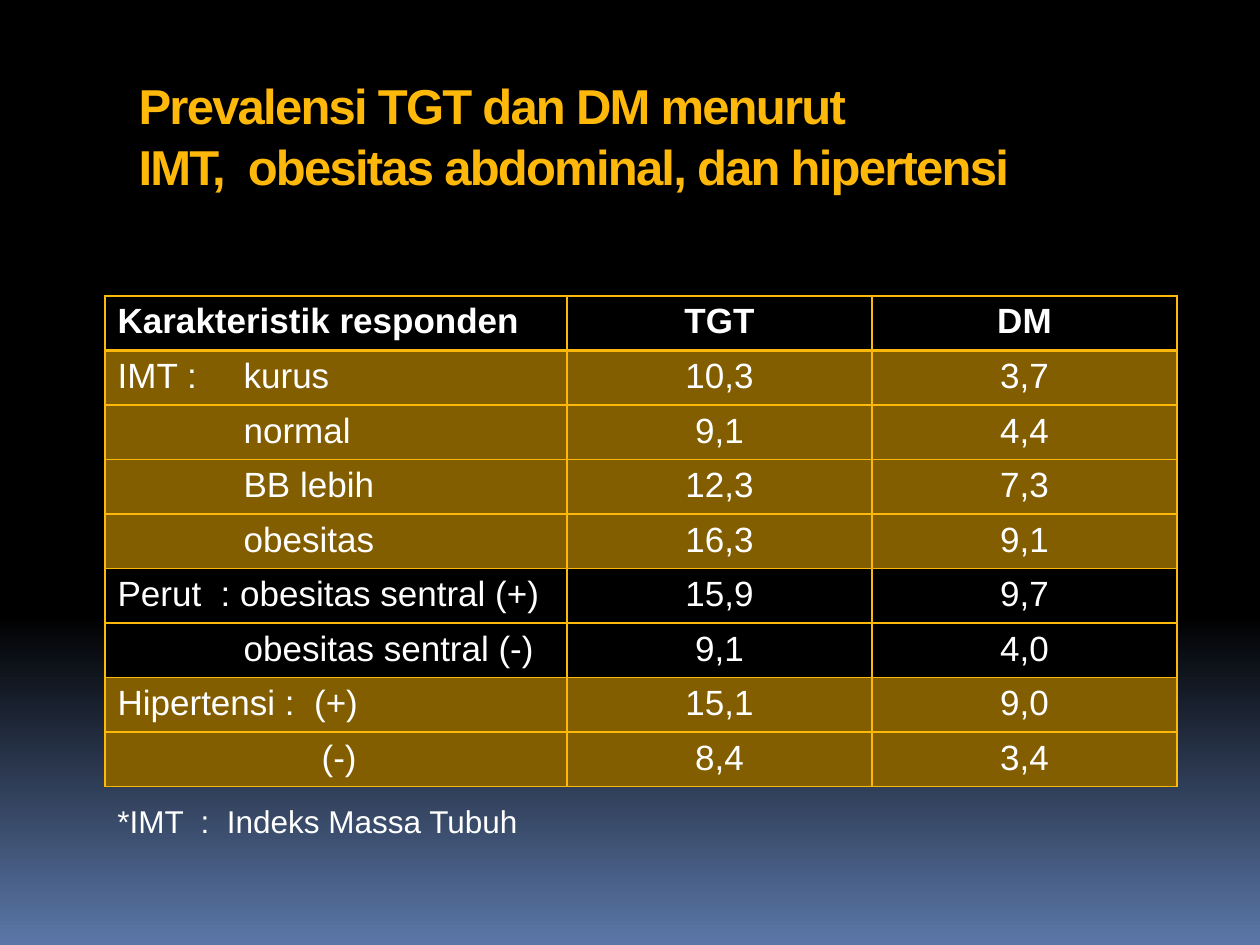
"""Build a slide with a table of TGT and DM prevalence by respondent traits."""
from dataclasses import dataclass

import pptx
import pptx.dml.color
import pptx.enum.text
import pptx.oxml
import pptx.oxml.ns
import pptx.slide
import pptx.util

RGBColor = pptx.dml.color.RGBColor
BLACK = RGBColor(0x00, 0x00, 0x00)
WHITE = RGBColor(0xFF, 0xFF, 0xFF)
AMBER = RGBColor(0xFE, 0xB8, 0x0A)
BROWN = RGBColor(0x83, 0x5E, 0x01)
BLUE = RGBColor(0x5B, 0x77, 0xA8)
ALIGN = pptx.enum.text.PP_ALIGN
ANCHOR = pptx.enum.text.MSO_ANCHOR

PX_PER_INCH = 126
COLUMN_WIDTHS = (462, 305, 305)
CATEGORY_INDENT = 126
SIGN_INDENT = 204
HEADINGS = ("Karakteristik responden", "TGT", "DM")
ROWS = (
    ("IMT :\tkurus", 0, "10,3", "3,7", BROWN),
    ("normal", CATEGORY_INDENT, "9,1", "4,4", BROWN),
    ("BB lebih", CATEGORY_INDENT, "12,3", "7,3", BROWN),
    ("obesitas", CATEGORY_INDENT, "16,3", "9,1", BROWN),
    ("Perut  : obesitas sentral (+)", 0, "15,9", "9,7", BLACK),
    ("obesitas sentral (-)", CATEGORY_INDENT, "9,1", "4,0", BLACK),
    ("Hipertensi :  (+)", 0, "15,1", "9,0", BROWN),
    ("(-)", SIGN_INDENT, "8,4", "3,4", BROWN),
)


def px(length):
    """Turn a length in px into EMU."""
    return pptx.util.Emu(round(length * 914400 / PX_PER_INCH))


@dataclass
class Painter:
    """Hold the style and the current slide."""

    page: pptx.slide.Slide
    font_name: str = "Arial"

    def style(self, para, size, color, bold=False):
        """Set the font of a paragraph."""
        font = para.font
        font.name, font.size, font.bold = self.font_name, pptx.util.Pt(size), bold
        font.color.rgb = color

    def background(self, top, bottom, start):
        """Fade the page from top to bottom colour, beginning at start."""
        fill = self.page.background.fill
        fill.gradient()
        fill.gradient_angle = 270
        for stop, color, position in zip(fill.gradient_stops, (top, bottom), (start, 1)):
            stop.color.rgb, stop.position = color, position

    def title(self, text, left, top, width, height):
        """Place the title, tightening its letters by one point."""
        box = self.page.shapes.title
        box.left, box.top, box.width, box.height = map(px, (left, top, width, height))
        frame = box.text_frame
        frame.text = text
        frame.word_wrap = True
        frame.auto_size = pptx.enum.text.MSO_AUTO_SIZE.NONE
        frame.vertical_anchor = ANCHOR.MIDDLE
        para = frame.paragraphs[0]
        para.alignment, para.line_spacing = ALIGN.LEFT, 1.05
        self.style(para, 28, AMBER, bold=True)
        for span in para.runs:
            span.font.language_id = None
            span._r.get_or_add_rPr().set("spc", "-100")

    def note(self, text, left, top, width, height):
        """Place a one-line note."""
        frame = self.page.shapes.add_textbox(*map(px, (left, top, width, height))).text_frame
        frame.text = text
        frame.word_wrap = False
        frame.auto_size = pptx.enum.text.MSO_AUTO_SIZE.SHAPE_TO_FIT_TEXT
        self.style(frame.paragraphs[0], 18, WHITE)

    def table(self, left, top, height):
        """Place the table with its headings and rows."""
        frame = self.page.shapes.add_table(
            len(ROWS) + 1, len(HEADINGS), px(left), px(top), px(sum(COLUMN_WIDTHS)), px(height))
        table = frame.table
        for column, width in zip(table.columns, COLUMN_WIDTHS):
            column.width = px(width)
        for index, heading in enumerate(HEADINGS):
            self.cell(table.cell(0, index), heading, index > 0, bold=True, bottom=2)
        for number, (label, indent, *values, fill) in enumerate(ROWS, 1):
            top_line = 2 if number == 1 else 1
            for index, text in enumerate((label, *values)):
                self.cell(table.cell(number, index), text, index > 0, fill=fill,
                          indent=0 if index else indent, top=top_line)

    def cell(self, cell, text, centred, fill=None, bold=False, indent=0, top=1, bottom=1):
        """Fill one cell and draw its borders."""
        cell.text = text
        para = cell.text_frame.paragraphs[0]
        para.alignment = ALIGN.CENTER if centred else ALIGN.LEFT
        self.style(para, 20, WHITE, bold)
        properties = para._p.get_or_add_pPr()
        if indent:
            properties.set("marL", str(px(indent)))
            properties.set("indent", "0")
        if "\t" in text:
            properties.insert_element_before(pptx.oxml.parse_xml(
                f'<a:tabLst {pptx.oxml.ns.nsdecls("a")}>'
                f'<a:tab pos="{px(CATEGORY_INDENT)}" algn="l"/></a:tabLst>'), "a:defRPr")
        for side, points in (("L", 1), ("R", 1), ("T", top), ("B", bottom)):
            cell._tc.get_or_add_tcPr().append(pptx.oxml.parse_xml(
                f'<a:ln{side} {pptx.oxml.ns.nsdecls("a")} w="{pptx.util.Pt(points)}">'
                f'<a:solidFill><a:srgbClr val="{AMBER}"/></a:solidFill></a:ln{side}>'))
        if fill is None:
            cell.fill.background()
        else:
            cell.fill.solid()
            cell.fill.fore_color.rgb = fill


def main():
    """Build and save the deck."""
    deck = pptx.Presentation()
    deck.slide_width, deck.slide_height = px(1260), px(945)
    painter = Painter(deck.slides.add_slide(deck.slide_layouts[5]))
    painter.background(BLACK, BLUE, 0.65)
    painter.title("Prevalensi TGT dan DM menurut\vIMT,  obesitas abdominal, dan hipertensi",
                  126, 71, 1134, 126)
    painter.table(105, 296, 491)
    painter.note("*IMT  :  Indeks Massa Tubuh", 105, 796, 430, 50)
    deck.save("out.pptx")


if __name__ == "__main__":
    main()
